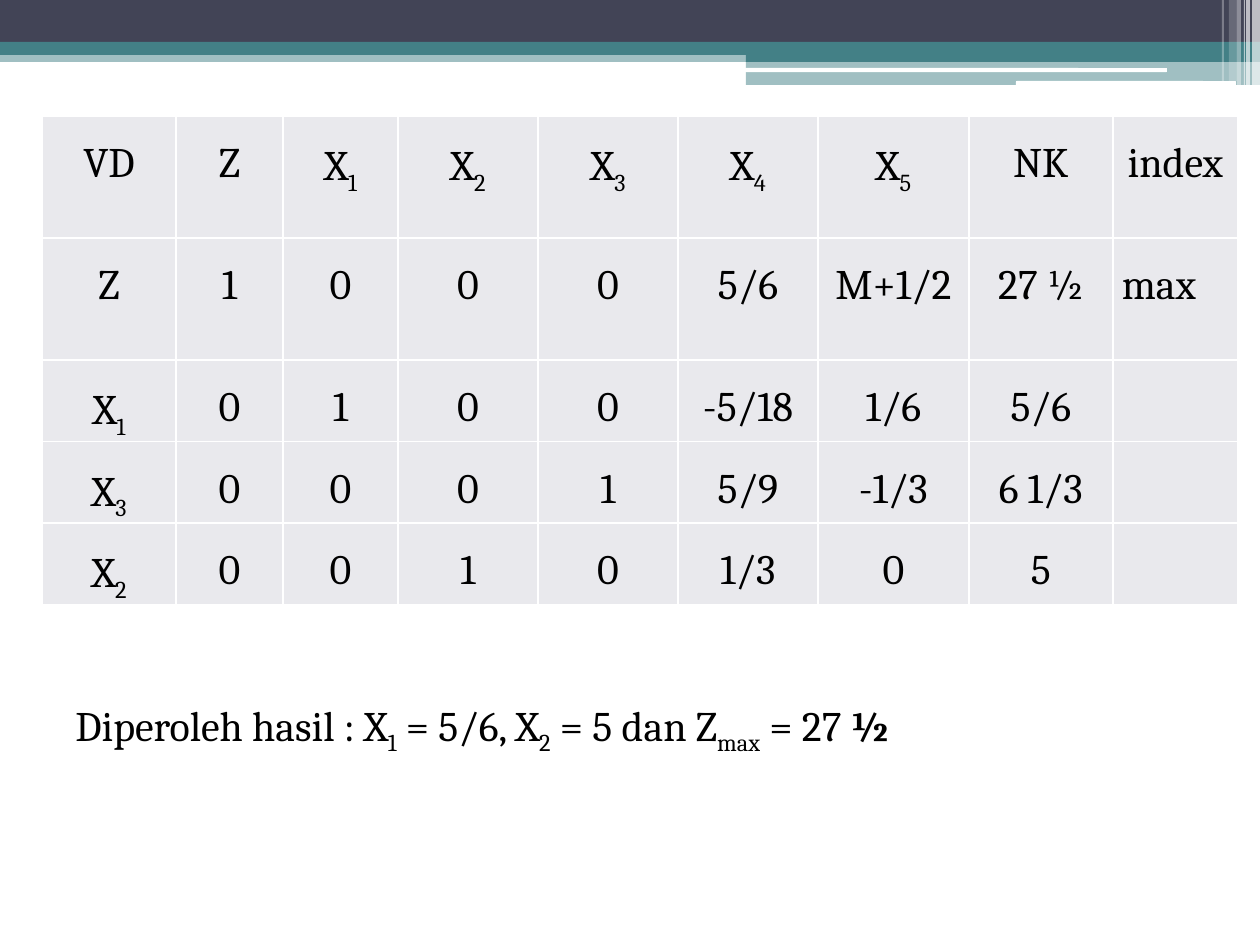
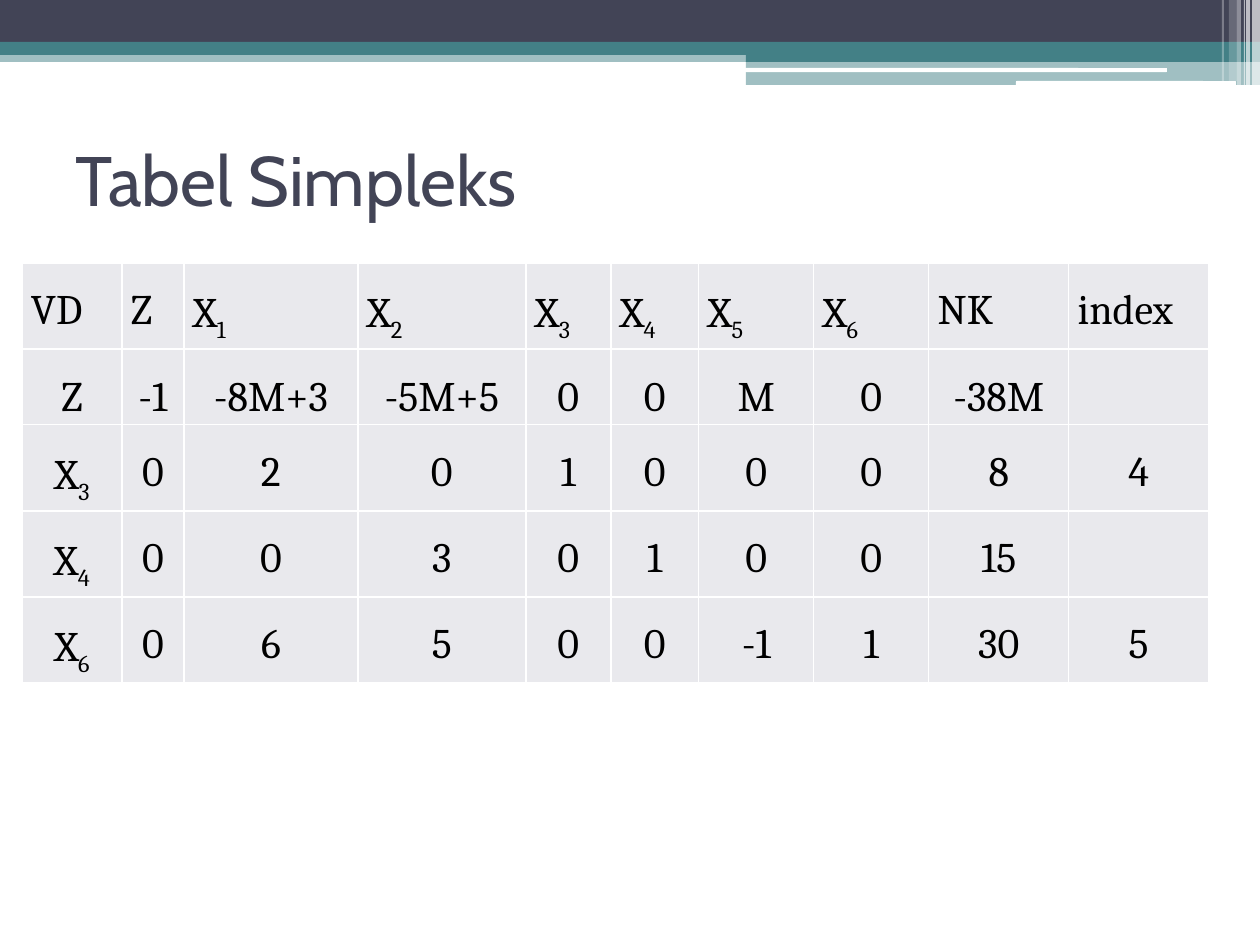
import pptx
import pptx.util
import pptx.dml.color
import pptx.enum.shapes
import pptx.enum.text
import pptx.oxml
import lxml.etree

PX = 914400 / 126
COLORS = {
    "navy": "424456",
    "teal": "438086",
    "white": "FFFFFF",
    "cell": "E9E9ED",
    "text": "000000",
}
BODY_FONT = "Cambria"
TITLE_FONT = "Cabin"
NAMESPACE = "http://schemas.openxmlformats.org/drawingml/2006/main"
RECT = pptx.enum.shapes.MSO_SHAPE.RECTANGLE
ROUNDED = pptx.enum.shapes.MSO_SHAPE.ROUNDED_RECTANGLE
CENTER = pptx.enum.text.PP_ALIGN.CENTER
JUSTIFY = pptx.enum.text.PP_ALIGN.JUSTIFY

BANDS = [
    (RECT, 0, 50, 1260, 12, "teal", 50),
    (RECT, 0, 0, 1260, 42, "navy", 100),
    (RECT, 0, 42, 1260, 13, "teal", 100),
    (RECT, 746, 49, 514, 13, "teal", 100),
    (RECT, 746, 61, 514, 24, "teal", 50),
    (ROUNDED, 745, 68, 422, 4, "white", 100),
    (ROUNDED, 1016, 81, 220, 5, "white", 100),
    (RECT, 1252, 0, 8, 85, "white", 65),
    (RECT, 1246, 0, 4, 85, "white", 65),
    (RECT, 1244, 0, 1, 85, "white", 60),
    (RECT, 1237, 0, 4, 85, "white", 40),
    (RECT, 1229, 0, 8, 81, "white", 20),
    (RECT, 1222, 0, 2, 81, "white", 30),
]

RESULT_ROWS = [
    ["VD", "Z", "X_1", "X_2", "X_3", "X_4", "X_5", "NK", "index"],
    ["Z", "1", "0", "0", "0", "5/6", "M+1/2", "27 ½", "max"],
    ["X_1", "0", "1", "0", "0", "-5/18", "1/6", "5/6", ""],
    ["X_3", "0", "0", "0", "1", "5/9", "-1/3", "6 1/3", ""],
    ["X_2", "0", "0", "1", "0", "1/3", "0", "5", ""],
]
SIMPLEX_ROWS = [
    ["VD", "Z", "X_1", "X_2", "X_3", "X_4", "X_5", "X_6", "NK", "index"],
    ["Z", "-1", "-8M+3", "-5M+5", "0", "0", "M", "0", "-38M", ""],
    ["X_3", "0", "2", "0", "1", "0", "0", "0", "8", "4"],
    ["X_4", "0", "0", "3", "0", "1", "0", "0", "15", ""],
    ["X_6", "0", "6", "5", "0", "0", "-1", "1", "30", "5"],
]
TABLES = [
    {
        "rows": RESULT_ROWS, "left": 42, "top": 116,
        "widths": [134, 107, 115, 140, 140, 140, 151, 144, 125],
        "heights": [122, 122, 58, 58, 58],
        "justified": {(1, 8)},
    },
    {
        "rows": SIMPLEX_ROWS, "left": 22, "top": 263,
        "widths": [100, 62, 174, 168, 85, 88, 115, 115, 140, 140],
        "heights": [72] * 5,
        "justified": {(0, column) for column in range(10)},
    },
]


def px(*lengths):
    return [pptx.util.Emu(round(length * PX)) for length in lengths]


def write_subscripted(paragraph, markup):
    for index, piece in enumerate(markup.split("_")):
        span = paragraph.add_run()
        span.text = piece
        span.font.size = pptx.util.Pt(24)
        span.font.name = BODY_FONT
        span.font.color.rgb = pptx.dml.color.RGBColor.from_string(COLORS["text"])
        if index % 2:
            span._r.get_or_add_rPr().set("baseline", "-25000")


deck = pptx.Presentation()
deck.slide_width, deck.slide_height = px(1260, 945)
pages = []

for layout in TABLES:
    page = deck.slides.add_slide(deck.slide_layouts[6])
    pages.append(page)
    for kind, left, top, width, height, color, opacity in BANDS:
        band = page.shapes.add_shape(kind, *px(left, top, width, height))
        band.shadow.inherit = False
        band.line.fill.background()
        band.fill.solid()
        band.fill.fore_color.rgb = pptx.dml.color.RGBColor.from_string(COLORS[color])
        if opacity < 100:
            tint = band._element.spPr.find(f".//{{{NAMESPACE}}}srgbClr")
            alpha = lxml.etree.SubElement(tint, f"{{{NAMESPACE}}}alpha")
            alpha.set("val", str(opacity * 1000))

    rows = layout["rows"]
    frame = page.shapes.add_table(
        len(rows), len(rows[0]),
        *px(layout["left"], layout["top"], sum(layout["widths"]), sum(layout["heights"])),
    )
    table = frame.table
    table.first_row = False
    table.horz_banding = False
    for column, width in zip(table.columns, px(*layout["widths"])):
        column.width = width
    for row, height in zip(table.rows, px(*layout["heights"])):
        row.height = height

    for row_index, row in enumerate(rows):
        for column_index, markup in enumerate(row):
            cell = table.cell(row_index, column_index)
            cell.margin_left, cell.margin_right, cell.margin_top, cell.margin_bottom = px(9, 9, 0, 0)
            for side in ("lnL", "lnR", "lnT", "lnB"):
                cell._tc.get_or_add_tcPr().append(pptx.oxml.parse_xml(
                    f'<a:{side} xmlns:a="{NAMESPACE}" w="12700"><a:solidFill>'
                    f'<a:srgbClr val="{COLORS["white"]}"/></a:solidFill></a:{side}>'
                ))
            cell.fill.solid()
            cell.fill.fore_color.rgb = pptx.dml.color.RGBColor.from_string(COLORS["cell"])
            if markup:
                para = cell.text_frame.paragraphs[0]
                justified = (row_index, column_index) in layout["justified"]
                para.alignment = JUSTIFY if justified else CENTER
                para.line_spacing = 1.5
                write_subscripted(para, markup)

result_page, simplex_page = pages

result_box = result_page.shapes.add_textbox(*px(63, 693, 1050, 115))
result_box.text_frame.word_wrap = True
result_para = result_box.text_frame.paragraphs[0]
write_subscripted(result_para, "Diperoleh hasil : X_1_ = 5/6, X_2_ = 5 dan Z_max_ = 27 ")
write_subscripted(result_para, "½")
result_para.runs[-1].font.bold = True

title_box = simplex_page.shapes.add_textbox(*px(63, 105, 1134, 147))
title_box.text_frame.word_wrap = True
title_box.text_frame.vertical_anchor = pptx.enum.text.MSO_ANCHOR.MIDDLE
title_box.text_frame.text = "Tabel Simpleks"
title_font = title_box.text_frame.paragraphs[0].runs[0].font
title_font.size = pptx.util.Pt(40)
title_font.name = TITLE_FONT
title_font.color.rgb = pptx.dml.color.RGBColor.from_string(COLORS["navy"])

deck.save("out.pptx")
